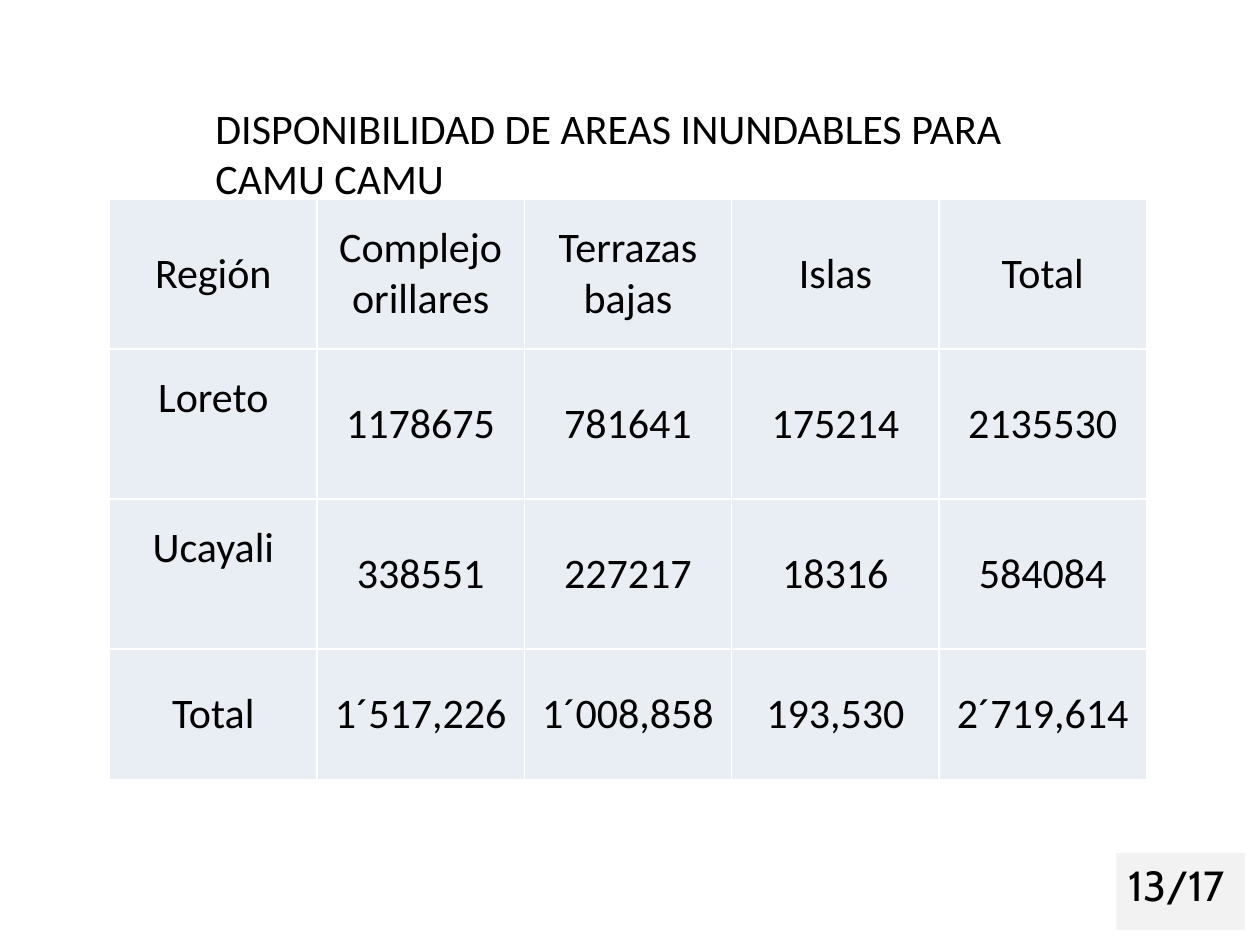
from dataclasses import dataclass

from lxml.etree import SubElement
from pptx import Presentation
from pptx.dml.color import RGBColor
from pptx.enum.shapes import MSO_SHAPE
from pptx.enum.text import MSO_ANCHOR, MSO_AUTO_SIZE, PP_ALIGN
from pptx.oxml.ns import qn
from pptx.util import Inches, Pt


@dataclass(frozen=True)
class Theme:
    text: RGBColor = RGBColor.from_string("000000")
    cell: RGBColor = RGBColor.from_string("E9EDF4")
    badge: RGBColor = RGBColor.from_string("F2F2F2")
    border: str = "FFFFFF"
    size: Pt = Pt(24)
    font: str = "Calibri"
    badge_font: str = "Cabin"


theme = Theme()


def format_text(tf, align, font=theme.font):
    for p in tf.paragraphs:
        p.alignment = align
        p.font.name = font
        p.font.size = theme.size
        p.font.bold = False
        p.font.color.rgb = theme.text


def add_borders(cell):
    tcPr = cell._tc.get_or_add_tcPr()
    for i, side in enumerate(("lnL", "lnR", "lnT", "lnB")):
        ln = tcPr.makeelement(qn(f"a:{side}"), {"w": str(Pt(1))})
        fill = SubElement(ln, qn("a:solidFill"))
        SubElement(fill, qn("a:srgbClr"), val=theme.border)
        tcPr.insert(i, ln)


prs = Presentation()
prs.slide_width = Inches(10)
prs.slide_height = Inches(7.5)
s = prs.slides.add_slide(prs.slide_layouts[5])

title = s.shapes.title
title.left, title.top = Inches(1.61), Inches(0.76)
title.width, title.height = Inches(7.32), Inches(0.91)
tf = title.text_frame
tf.text = "DISPONIBILIDAD DE AREAS INUNDABLES PARA CAMU CAMU"
tf.word_wrap = True
tf.auto_size = MSO_AUTO_SIZE.NONE
tf.vertical_anchor = MSO_ANCHOR.TOP
format_text(tf, PP_ALIGN.LEFT)

rows = [
    ["Región", "Complejo\norillares", "Terrazas\nbajas", "Islas", "Total"],
    ["Loreto", "1178675", "781641", "175214", "2135530"],
    ["Ucayali", "338551", "227217", "18316", "584084"],
    ["Total", "1´517,226", "1´008,858", "193,530", "2´719,614"],
]
row_heights = [1.19, 1.19, 1.19, 1.04]
raised_labels = {"Loreto", "Ucayali"}

table = s.shapes.add_table(
    len(rows), len(rows[0]), Inches(0.87), Inches(1.58), Inches(8.23), Inches(4.61)
).table
table.first_row = False
table.horz_banding = False
for row, height in zip(table.rows, row_heights):
    row.height = Inches(height)
for r, values in enumerate(rows):
    for c, value in enumerate(values):
        cell = table.cell(r, c)
        cell.text = value
        cell.vertical_anchor = MSO_ANCHOR.MIDDLE
        cell.margin_left = cell.margin_right = Inches(0.05)
        cell.margin_top = 0
        cell.margin_bottom = Inches(0.41 if value in raised_labels else 0)
        cell.fill.solid()
        cell.fill.fore_color.rgb = theme.cell
        add_borders(cell)
        format_text(cell.text_frame, PP_ALIGN.CENTER)

badge = s.shapes.add_shape(
    MSO_SHAPE.RECTANGLE, Inches(8.86), Inches(6.77), Inches(1.02), Inches(0.61)
)
badge.shadow.inherit = False
badge.fill.solid()
badge.fill.fore_color.rgb = theme.badge
badge.line.fill.background()
tf = badge.text_frame
tf.text = "13/17"
tf.word_wrap = True
tf.vertical_anchor = MSO_ANCHOR.TOP
format_text(tf, PP_ALIGN.LEFT, theme.badge_font)

prs.save("out.pptx")
